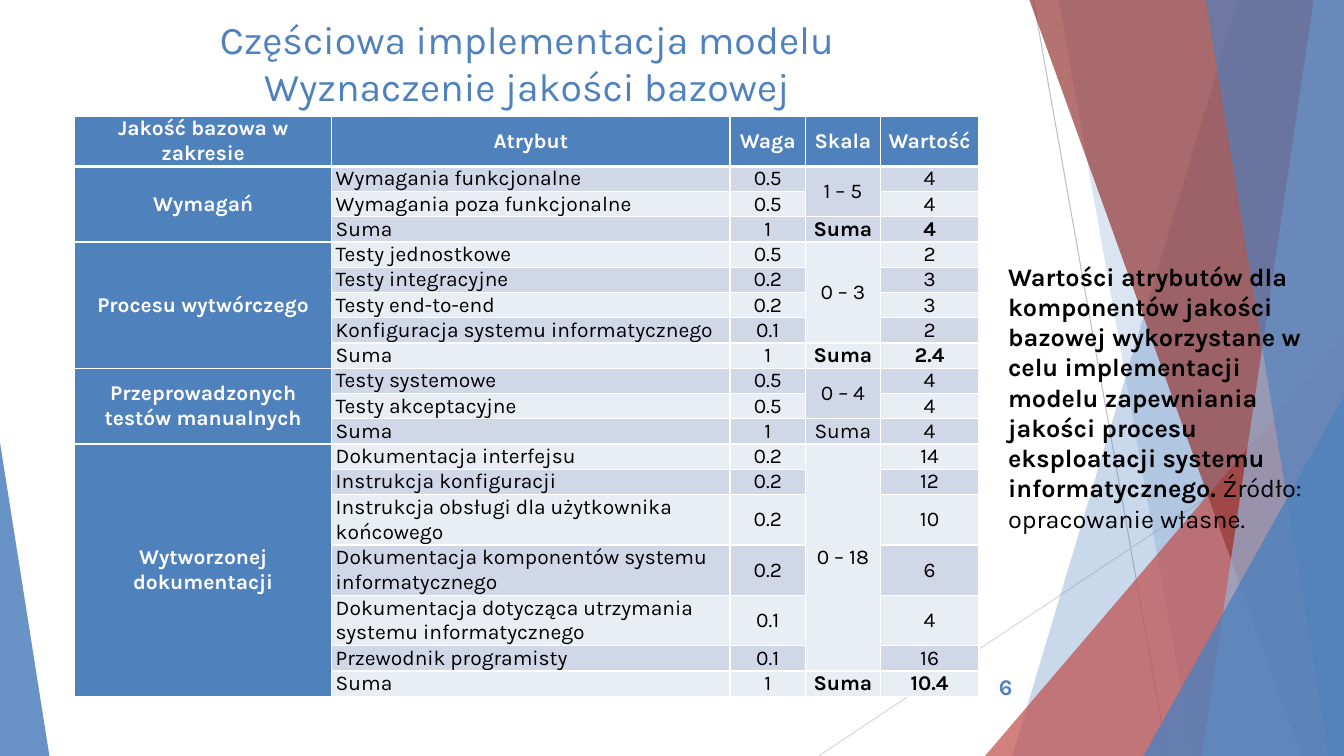
"""Build the slide with the base quality table and the faceted side decoration."""
from lxml.etree import SubElement
from pptx import Presentation
from pptx.dml.color import RGBColor
from pptx.enum.shapes import MSO_CONNECTOR, MSO_SHAPE
from pptx.enum.text import MSO_ANCHOR, PP_ALIGN
from pptx.oxml.ns import qn
from pptx.util import Inches, Pt
from dataclasses import dataclass


@dataclass(frozen=True)
class Theme:
    """Colours, font and type sizes of the slide."""
    font: str = "Karla"
    blue: str = "4F81BD"
    pale_blue: str = "95B3D7"
    red: str = "C0504D"
    dark_red: str = "953735"
    dark_band: str = "D0D8E8"
    light_band: str = "E9EDF4"
    grey: str = "BFBFBF"
    pale_grey: str = "D9D9D9"
    white: str = "FFFFFF"
    black: str = "000000"
    title_size: int = 28
    caption_size: int = 18
    number_size: int = 16
    table_size: int = 15


theme = Theme()


def write_text(frame, spans, size, color, alignment=PP_ALIGN.LEFT):
    """Write (text, bold) spans as one paragraph."""
    frame.word_wrap = True
    para = frame.paragraphs[0]
    para.alignment = alignment
    for text, bold in spans:
        span = para.add_run()
        span.text = text
        span.font.color.rgb = RGBColor.from_string(color)
        for name, value in {"name": theme.font, "size": Pt(size), "bold": bold}.items():
            setattr(span.font, name, value)


def style_cell(cell, fill, bottom_width):
    """Give a cell its insets, white borders and fill."""
    layout = {"margin_left": Inches(0.04), "margin_right": Inches(0.04), "margin_top": 0,
              "margin_bottom": 0, "vertical_anchor": MSO_ANCHOR.MIDDLE}
    for name, value in layout.items():
        setattr(cell, name, value)
    properties = cell._tc.get_or_add_tcPr()
    for side, width in {"lnL": 1, "lnR": 1, "lnT": 1, "lnB": bottom_width}.items():
        border = SubElement(properties, qn(f"a:{side}"), w=str(Pt(width)))
        paint = SubElement(border, qn("a:solidFill"))
        SubElement(paint, qn("a:srgbClr"), val=theme.white)
    cell.fill.solid()
    cell.fill.fore_color.rgb = RGBColor.from_string(fill)


deck = Presentation()
deck.slide_width, deck.slide_height = Inches(13.33), Inches(7.5)
page = deck.slides.add_slide(deck.slide_layouts[6])
shapes = page.shapes

for start_x, start_y, end_x, end_y, color in [
    (10.25, 0, 11.58, 7.5, theme.grey),
    (13.33, 4.03, 8.12, 7.5, theme.pale_grey),
]:
    ray = shapes.add_connector(MSO_CONNECTOR.STRAIGHT, Inches(start_x), Inches(start_y),
                               Inches(end_x), Inches(end_y))
    ray.line.color.rgb = RGBColor.from_string(color)
    ray.line.width = Pt(0.75)
    SubElement(ray._element.spPr, qn("a:effectLst"))

facets = [
    ("band", (12.28, 10.04), theme.blue, 30),
    ("band", (10.5, 11.83), theme.blue, 20),
    ("triangle", (9.77, 3.33, 3.56, 1), theme.red, 72),
    ("band", (10.21, 12.91), theme.dark_red, 70),
    ("band", (13.03, 11.92), theme.pale_blue, 70),
    ("band", (11.96, 13.18), theme.blue, 65),
    ("triangle", (11.34, 3.93, 1.99, 1), theme.blue, 80),
    ("triangle", (0, 4.39, 0.49, 0), theme.blue, 85),
]
for kind, geometry, color, opacity in facets:
    if kind == "band":
        top_x, bottom_x = geometry
        outline = shapes.build_freeform(Inches(top_x), 0)
        corners = [(13.33, 0), (13.33, 7.5), (bottom_x, 7.5)]
        outline.add_line_segments([(Inches(x), Inches(y)) for x, y in corners], close=True)
        facet = outline.convert_to_shape()
    else:
        left, top, width, apex = geometry
        facet = shapes.add_shape(MSO_SHAPE.ISOSCELES_TRIANGLE, Inches(left), Inches(top),
                                 Inches(width), Inches(7.5 - top))
        facet.adjustments[0] = apex
    facet.shadow.inherit = False
    facet.line.fill.background()
    facet.fill.solid()
    facet.fill.fore_color.rgb = RGBColor.from_string(color)
    paint = facet._element.spPr.find(qn("a:solidFill")).find(qn("a:srgbClr"))
    SubElement(paint, qn("a:alpha"), val=str(opacity * 1000))

title = shapes.add_textbox(Inches(2.01), Inches(0.1), Inches(6.43), Inches(0.98))
write_text(title.text_frame,
           [("Częściowa implementacja modelu Wyznaczenie jakości bazowej", False)],
           theme.title_size, theme.blue, PP_ALIGN.CENTER)

headings = ["Jakość bazowa w zakresie", "Atrybut", "Waga", "Skala", "Wartość"]
groups = [
    ("Wymagań", "1 – 5", "4", True, [
        ("Wymagania funkcjonalne", "0.5", "4"),
        ("Wymagania poza funkcjonalne", "0.5", "4")]),
    ("Procesu wytwórczego", "0 – 3", "2.4", True, [
        ("Testy jednostkowe", "0.5", "2"),
        ("Testy integracyjne", "0.2", "3"),
        ("Testy end-to-end", "0.2", "3"),
        ("Konfiguracja systemu informatycznego", "0.1", "2")]),
    ("Przeprowadzonych testów manualnych", "0 – 4", "4", False, [
        ("Testy systemowe", "0.5", "4"),
        ("Testy akceptacyjne", "0.5", "4")]),
    ("Wytworzonej dokumentacji", "0 – 18", "10.4", True, [
        ("Dokumentacja interfejsu", "0.2", "14"),
        ("Instrukcja konfiguracji", "0.2", "12"),
        ("Instrukcja obsługi dla użytkownika końcowego", "0.2", "10"),
        ("Dokumentacja komponentów systemu informatycznego", "0.2", "6"),
        ("Dokumentacja dotycząca utrzymania systemu informatycznego", "0.1", "4"),
        ("Przewodnik programisty", "0.1", "16")]),
]
rows = [(headings, True)]
merges = []
for group, scale, total, bold_total, attributes in groups:
    first, last = len(rows), len(rows) + len(attributes)
    merges += [(first, last, 0), (first, last - 1, 3)]
    for index, (attribute, weight, value) in enumerate(attributes):
        labels = (group, scale) if index == 0 else ("", "")
        rows.append(([labels[0], attribute, weight, labels[1], value], False))
    rows.append((["", "Suma", "1", "Suma", total], bold_total))

table = shapes.add_table(len(rows), len(headings), Inches(0.74), Inches(1.15),
                         Inches(8.97), Inches(5.75)).table
table.first_row = table.horz_banding = False
for column, width in zip(table.columns, [2.55, 3.95, 0.75, 0.74, 0.98]):
    column.width = Inches(width)
tall_rows = {0, 14, 15, 16}
for row_index, (texts, bold_row) in enumerate(rows):
    table.rows[row_index].height = Inches(0.5 if row_index in tall_rows else 0.25)
    band = theme.dark_band if row_index % 2 else theme.light_band
    for column_index, text in enumerate(texts):
        cell = table.cell(row_index, column_index)
        heading = row_index == 0 or column_index == 0
        style_cell(cell, theme.blue if heading else band, 3 if row_index == 0 else 1)
        if text:
            bold = heading or (bold_row and column_index > 2)
            left_aligned = column_index == 1 and not heading
            write_text(cell.text_frame, [(text, bold)], theme.table_size,
                       theme.white if heading else theme.black,
                       PP_ALIGN.LEFT if left_aligned else PP_ALIGN.CENTER)
for first, last, column_index in merges:
    table.cell(first, column_index).merge(table.cell(last, column_index))

caption = shapes.add_textbox(Inches(9.9), Inches(2.54), Inches(3.19), Inches(2.83))
write_text(caption.text_frame, [
    ("Wartości atrybutów dla komponentów jakości bazowej wykorzystane w celu implementacji "
     "modelu zapewniania jakości procesu eksploatacji systemu informatycznego. ", True),
    ("Źródło: opracowanie własne.", False),
], theme.caption_size, theme.black)

number = shapes.add_textbox(Inches(9.39), Inches(6.61), Inches(0.75), Inches(0.4))
number.text_frame.vertical_anchor = MSO_ANCHOR.MIDDLE
write_text(number.text_frame, [("6", True)], theme.number_size, theme.blue, PP_ALIGN.RIGHT)

deck.save("out.pptx")
